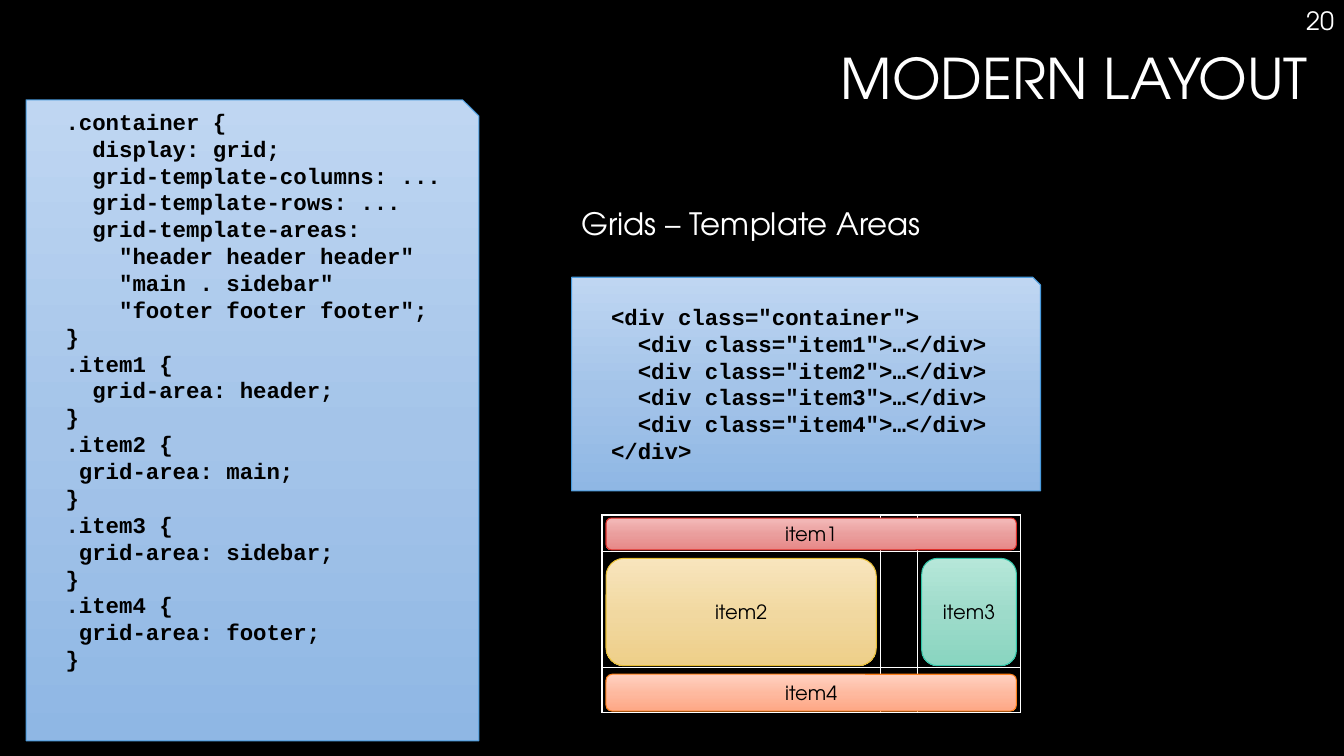
"""Build the slide on CSS grid template areas."""
from copy import deepcopy

from lxml.etree import SubElement
from pptx import Presentation
from pptx.dml.color import RGBColor
from pptx.enum.shapes import MSO_SHAPE as Preset
from pptx.enum.text import MSO_ANCHOR as Anchor, PP_ALIGN as Align
from pptx.oxml.ns import qn
from pptx.util import Inches, Pt

WIDTH, HEIGHT = Inches(13.33), Inches(7.5)
SANS, MONO = "TeX Gyre Adventor", "Courier New"
COLOURS = {"page": "000000", "light": "FFFFFF", "dark": "000000"}
GRADIENTS = {
    "code": ("BFD6F2", "A4C4E9", "8FB7E4", "4A9BDC"),
    "item1": ("F3BAB9", "EA9E9D", "E78887", "DF2E28"),
    "item2": ("F8E5BD", "F1D8A0", "EECF89", "E9BF35"),
    "item3": ("B6E7D9", "9DDBCA", "89D5C0", "32C7A9"),
    "item4": ("FFD2C2", "FEB99F", "FEA785", "FE801A"),
}
STOPS = (0, 0.52, 1)

GRID_LEFT, GRID_TOP = 44.79, 68.13
TRACK_COLUMNS = (20.71, 2.78, 7.65)
TRACK_ROWS = (4.8, 15.33, 6)
SIDE_GAP, BOTTOM_GAP = 0.3, 0.2
TOP_GAPS = (0.4, 0.93, 0.93)
AREAS = {"item1": (0, 0, 3), "item2": (1, 0, 1), "item3": (1, 2, 1), "item4": (2, 0, 3)}

CSS = """.container {
  display: grid;
  grid-template-columns: ...
  grid-template-rows: ...
  grid-template-areas:
    "header header header"
    "main . sidebar"
    "footer footer footer";
}
.item1 {
  grid-area: header;
}
.item2 {
 grid-area: main;
}
.item3 {
 grid-area: sidebar;
}
.item4 {
 grid-area: footer;
}"""
HTML = """<div class="container">
  <div class="item1">…</div>
  <div class="item2">…</div>
  <div class="item3">…</div>
  <div class="item4">…</div>
</div>"""


def colour(value):
    """Turn a hex string into a colour."""
    return RGBColor.from_string(value)


def across(share):
    """Turn a percentage of the slide width into a length."""
    return round(WIDTH * share / 100)


def down(share):
    """Turn a percentage of the slide height into a length."""
    return round(HEIGHT * share / 100)


def place(left, top, width, height):
    """Turn four percentages into a position and size."""
    return across(left), down(top), across(width), down(height)


def write(shape, text, size, font, ink, align, anchor, bold=False):
    """Fill a shape with text of one style."""
    frame = shape.text_frame
    frame.text = text
    frame.word_wrap = True
    frame.vertical_anchor = anchor
    for para in frame.paragraphs:
        para.alignment = align
        for span in para.runs:
            span.font.size = Pt(size)
            span.font.name = font
            span.font.bold = bold
            span.font.color.rgb = colour(COLOURS[ink])
    return frame


def add_label(page, area, text, size, align):
    """Add light text directly on the page."""
    box = page.shapes.add_textbox(*place(*area))
    return write(box, text, size, SANS, "light", align, Anchor.TOP).paragraphs[0]


def add_gradient_box(page, preset, area, name):
    """Add a shape with a downward three-stop gradient and a thin outline."""
    box = page.shapes.add_shape(preset, *place(*area))
    box.shadow.inherit = False
    box.fill.gradient()
    box.fill.gradient_angle = 270
    stop_list = box._element.spPr.find(qn("a:gradFill")).find(qn("a:gsLst"))
    stop_list.insert(1, deepcopy(stop_list[0]))
    *shades, outline = GRADIENTS[name]
    for stop, position, shade in zip(box.fill.gradient_stops, STOPS, shades):
        stop.position = position
        stop.color.rgb = colour(shade)
    box.line.color.rgb = colour(outline)
    box.line.width = Pt(0.75)
    return box


def add_code(page, area, text, anchor):
    """Add a snipped panel of code."""
    panel = add_gradient_box(page, Preset.SNIP_1_RECTANGLE, area, "code")
    panel.adjustments[0] = 0.036
    frame = write(panel, text, 16, MONO, "dark", Align.LEFT, anchor, bold=True)
    frame.margin_left, frame.margin_top = Inches(0.39), 0
    frame.margin_right, frame.margin_bottom = Inches(0.1), Inches(0.05)


def outline_cell(cell):
    """Draw thin light borders around an unfilled cell."""
    cell.fill.background()
    cell.margin_top = cell.margin_bottom = 0
    properties = cell._tc.get_or_add_tcPr()
    for index, side in enumerate(("a:lnL", "a:lnR", "a:lnT", "a:lnB")):
        border = properties.makeelement(qn(side), {"w": str(Pt(1))})
        fill = SubElement(border, qn("a:solidFill"))
        SubElement(fill, qn("a:srgbClr"), val=COLOURS["light"])
        properties.insert(index, border)


def add_tracks(page):
    """Add the table that shows the grid lines."""
    area = place(GRID_LEFT, GRID_TOP, sum(TRACK_COLUMNS), sum(TRACK_ROWS))
    table = page.shapes.add_table(len(TRACK_ROWS), len(TRACK_COLUMNS), *area).table
    table.first_row = table.horz_banding = False
    for column, share in zip(table.columns, TRACK_COLUMNS):
        column.width = across(share)
    for row, share in zip(table.rows, TRACK_ROWS):
        row.height = down(share)
    for cell in table.iter_cells():
        outline_cell(cell)


def add_item(page, name, row, column, span):
    """Add a rounded item inside its grid area."""
    left = GRID_LEFT + sum(TRACK_COLUMNS[:column]) + SIDE_GAP
    top = GRID_TOP + sum(TRACK_ROWS[:row]) + TOP_GAPS[row]
    width = sum(TRACK_COLUMNS[column:column + span]) - 2 * SIDE_GAP
    height = TRACK_ROWS[row] - TOP_GAPS[row] - BOTTOM_GAP
    box = add_gradient_box(page, Preset.ROUNDED_RECTANGLE, (left, top, width, height), name)
    write(box, name, 14, SANS, "dark", Align.CENTER, Anchor.MIDDLE)


def main():
    """Build and save the deck."""
    deck = Presentation()
    deck.slide_width, deck.slide_height = WIDTH, HEIGHT
    page = deck.slides.add_slide(deck.slide_layouts[6])
    page.background.fill.solid()
    page.background.fill.fore_color.rgb = colour(COLOURS["page"])

    title = add_label(page, (1.95, 6.13, 96.1, 18.8), "MODERN LAYOUT", 40, Align.RIGHT)
    title.line_spacing = 0.9
    add_label(page, (78.39, 0, 21.61, 5.33), "20", 18, Align.RIGHT)
    add_code(page, (1.95, 13.2, 33.68, 84.8), CSS, Anchor.TOP)
    add_code(page, (42.54, 36.67, 34.88, 28.27), HTML, Anchor.MIDDLE)
    heading = add_label(page, (42.54, 26.93, 34.88, 6.27), "Grids – Template Areas", 22, Align.LEFT)
    heading.line_spacing = 0.9
    heading.space_before = Pt(10)
    add_tracks(page)
    for name, area in AREAS.items():
        add_item(page, name, *area)
    deck.save("out.pptx")


if __name__ == "__main__":
    main()
